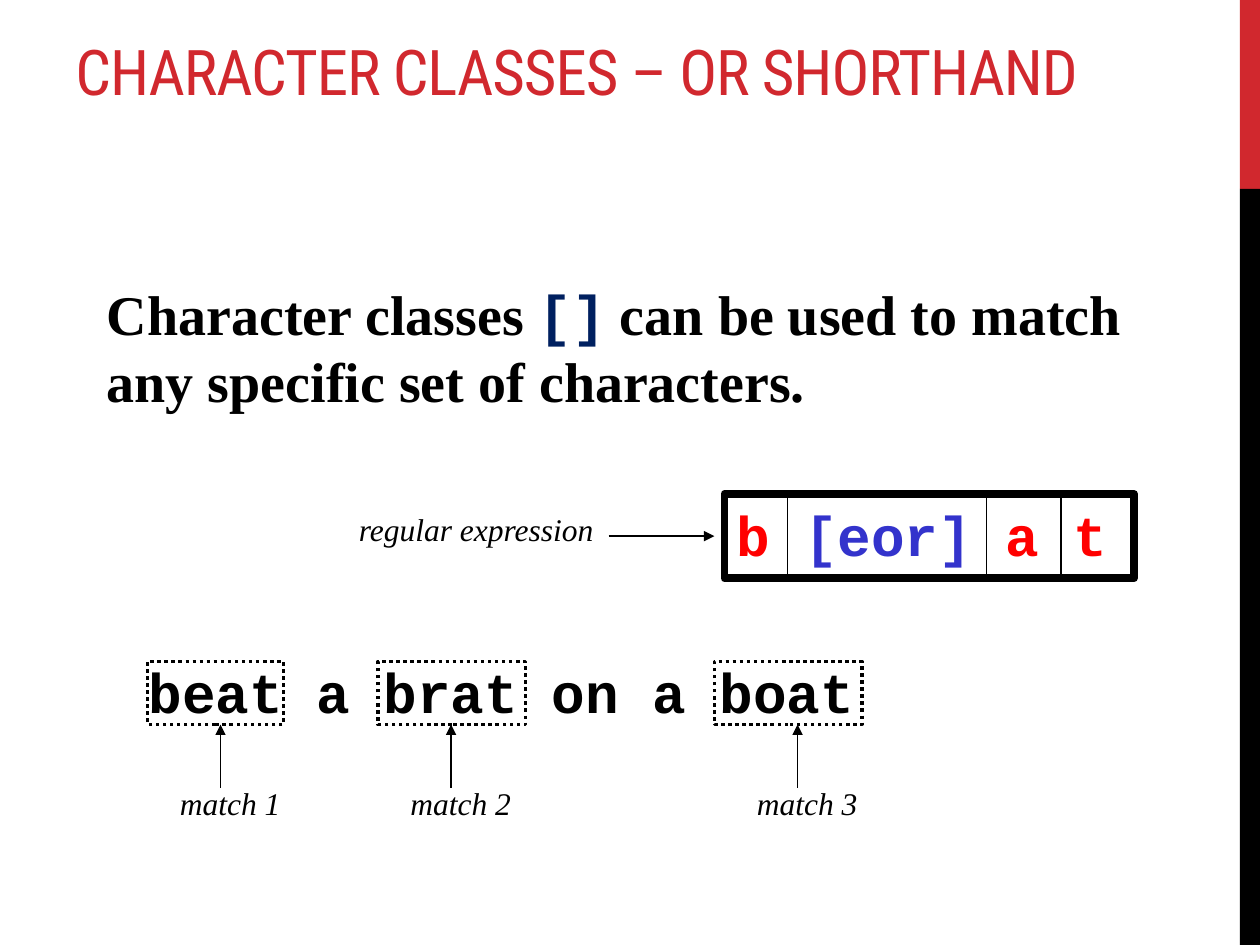
from dataclasses import dataclass

import pptx
import pptx.util
from pptx.dml.color import RGBColor
from pptx.enum.dml import MSO_LINE
from pptx.enum.shapes import MSO_CONNECTOR, MSO_SHAPE
from pptx.enum.text import MSO_ANCHOR
from pptx.oxml.xmlchemy import OxmlElement
from pptx.util import Inches


@dataclass(frozen=True)
class Theme:
    red: str = "D1282E"
    black: str = "000000"
    navy: str = "002060"
    literal: str = "FF0000"
    char_class: str = "3333CC"
    heading: str = "Roboto Condensed"
    serif: str = "Times New Roman"
    mono: str = "Courier New"
    title_size: int = 36
    text_size: int = 32
    label_size: int = 18


T = Theme()


def space_before(p, percent):
    """Set paragraph spacing relative to the text size."""
    before = OxmlElement("a:spcBef")
    pct = OxmlElement("a:spcPct")
    pct.set("val", str(percent * 1000))
    before.append(pct)
    p._p.get_or_add_pPr().insert(0, before)


def add_text(s, box, parts, size, before=50, bold=False, italic=False, wrap=True):
    """Write one paragraph from (text, font, colour) parts."""
    tf = s.shapes.add_textbox(*map(Inches, box)).text_frame
    tf.word_wrap = wrap
    p = tf.paragraphs[0]
    if before:
        space_before(p, before)
    for text, font, color in parts:
        r = p.add_run()
        r.text = text
        r.font.name = font
        r.font.size = pptx.util.Pt(size)
        r.font.bold = bold
        r.font.italic = italic
        r.font.color.rgb = RGBColor.from_string(color)
    return tf


def add_label(s, box, text):
    add_text(s, box, [(text, T.serif, T.black)], T.label_size, italic=True, wrap=False)


def add_rect(s, box, fill=None, width=None, dash=None):
    sp = s.shapes.add_shape(MSO_SHAPE.RECTANGLE, *map(Inches, box))
    sp.shadow.inherit = False
    if fill:
        sp.fill.solid()
        sp.fill.fore_color.rgb = RGBColor.from_string(fill)
    else:
        sp.fill.background()
    if width:
        sp.line.color.rgb = RGBColor.from_string(T.black)
        sp.line.width = pptx.util.Pt(width)
        sp.line.dash_style = dash
    else:
        sp.line.fill.background()


def add_line(s, x1, y1, x2, y2, arrow=False):
    line = s.shapes.add_connector(MSO_CONNECTOR.STRAIGHT, *map(Inches, (x1, y1, x2, y2)))
    line.line.color.rgb = RGBColor.from_string(T.black)
    line.line.width = pptx.util.Pt(0.75)
    if arrow:
        tail = OxmlElement("a:tailEnd")
        tail.set("type", "triangle")
        line.line._get_or_add_ln().append(tail)
    line._element.spPr.append(OxmlElement("a:effectLst"))


def side_band(s, x, y, w, h):
    red_height = h / 5
    add_rect(s, (x, y, w, red_height), T.red)
    add_rect(s, (x, y + red_height, w, h - red_height), T.black)


def title(s, box):
    text = "CHARACTER CLASSES – OR SHORTHAND"
    tf = add_text(s, box, [(text, T.heading, T.red)], T.title_size, before=0)
    tf.vertical_anchor = MSO_ANCHOR.BOTTOM
    tf.paragraphs[0].runs[0]._r.get_or_add_rPr().set("spc", "-60")


def explanation(s, box):
    parts = [("Character classes ", T.serif, T.black),
             ("[]", T.mono, T.navy),
             (" can be used to match any specific set of characters.", T.serif, T.black)]
    add_text(s, box, parts, T.text_size, before=20, bold=True)


def regular_expression(s, x, y, w, h):
    """Framed pattern with cell dividers, and a label pointing at it."""
    add_label(s, (x - 3, y + 0.08, 2.08, 0.4), "regular expression")
    add_line(s, x - 0.92, y + h / 2, x - 0.08, y + h / 2, arrow=True)
    add_rect(s, (x, y, w, h), width=4.5)
    parts = [("b ", T.mono, T.literal),
             ("[eor]", T.mono, T.char_class),
             (" a t", T.mono, T.literal)]
    add_text(s, (x, y, w + 0.25, 0.63), parts, T.text_size, bold=True)
    for dx in (0.5, 2.08, 2.67):
        add_line(s, x + dx, y, x + dx, y + h)


def matches(s, x, y, w, h):
    """Sample sentence with each matching word boxed and numbered."""
    add_text(s, (x, y, w, h), [("beat a brat on a boat", T.mono, T.black)],
             T.text_size, bold=True)
    frame_top, frame_height = y + 0.08, 0.5
    frame_bottom = frame_top + frame_height
    words = [(0.09, 1.08, 0.67), (1.92, 1.17, 2.5), (4.59, 1.17, 5.25)]
    for i, (left, width, arrow_x) in enumerate(words, 1):
        add_rect(s, (x + left, frame_top, width, frame_height),
                 width=2, dash=MSO_LINE.ROUND_DOT)
        ax = x + arrow_x
        add_line(s, ax, frame_bottom + 0.5, ax, frame_bottom, arrow=True)
        add_label(s, (ax - 0.42, y + 1, 1, 0.4), f"match {i}")


def main():
    prs = pptx.Presentation()
    prs.slide_width, prs.slide_height = Inches(10), Inches(7.5)
    s = prs.slides.add_slide(prs.slide_layouts[6])
    side_band(s, 9.84, 0, 0.16, 7.5)
    title(s, (0.5, 0.03, 9.34, 0.88))
    explanation(s, (0.75, 2.17, 8.5, 1.17))
    regular_expression(s, 5.75, 3.92, 3.25, 0.67)
    matches(s, 1.08, 5.17, 6.75, 0.63)
    prs.save("out.pptx")


if __name__ == "__main__":
    main()
